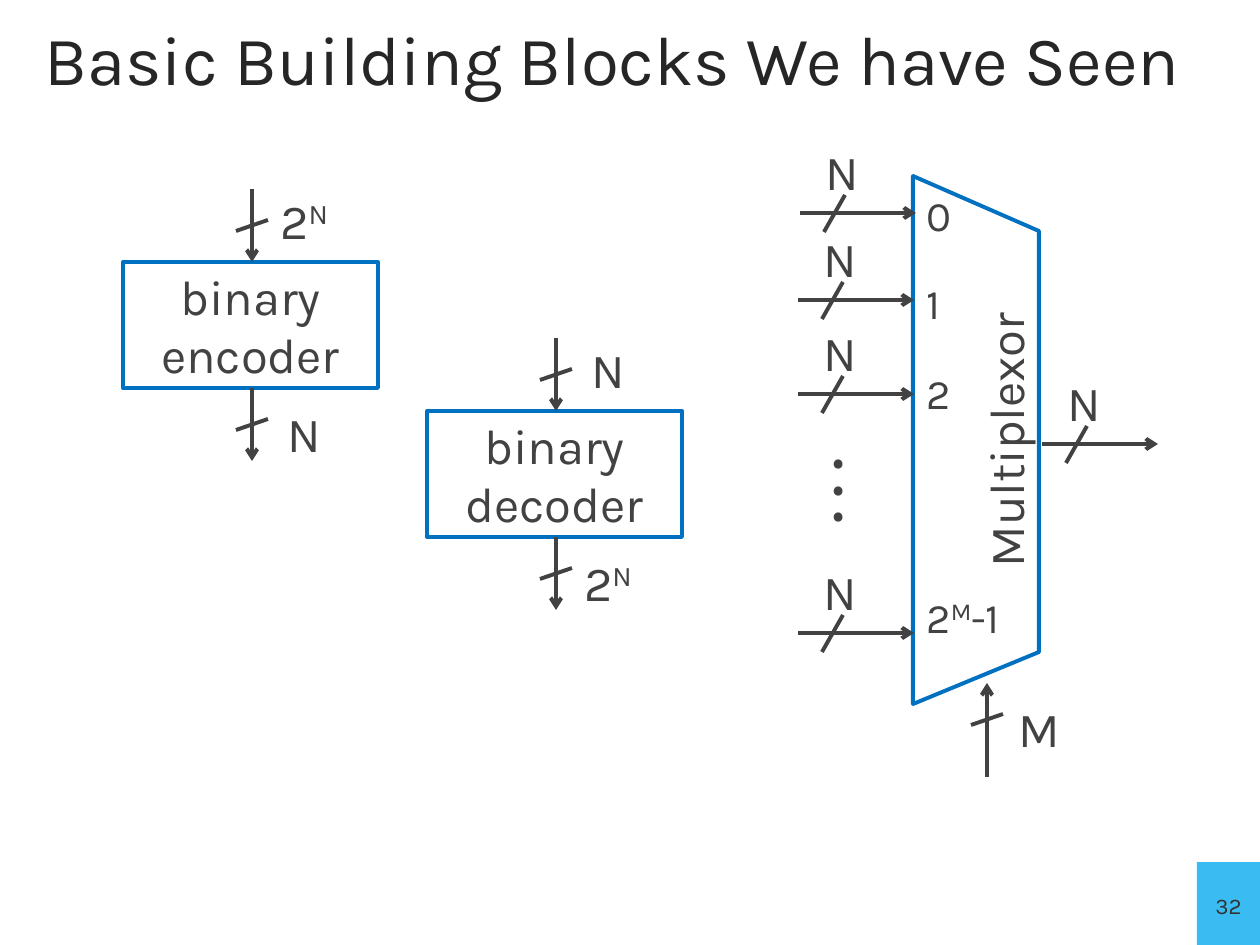
from dataclasses import dataclass

from lxml.etree import SubElement
from pptx import Presentation
from pptx.dml.color import RGBColor
from pptx.enum.shapes import MSO_CONNECTOR as Connector, MSO_SHAPE as Preset
from pptx.enum.text import MSO_ANCHOR as Anchor, MSO_AUTO_SIZE as AutoSize, PP_ALIGN as Align
from pptx.oxml.ns import qn
from pptx.util import Pt

EMU_PER_PX = 914400 / 126


def px(length):
    return round(length * EMU_PER_PX)


@dataclass(frozen=True)
class Theme:
    font: str = "Karla"
    heading: RGBColor = RGBColor(0x26, 0x26, 0x26)
    ink: RGBColor = RGBColor(0x42, 0x42, 0x42)
    outline: RGBColor = RGBColor(0x00, 0x70, 0xC0)
    accent: RGBColor = RGBColor(0x3A, 0xBC, 0xF2)
    page_ink: RGBColor = RGBColor(0x32, 0x32, 0x32)
    title_size: float = 39.6
    dots_size: float = 32
    body_size: float = 28
    port_size: float = 24
    page_size: float = 16
    stroke: float = 2.25
    spacing: float = 1.16


def write(frame, text, *, font, size, color, align=Align.CENTER, anchor=Anchor.MIDDLE,
          spacing=None, bold=None, small_caps=False, wrap=True):
    frame.word_wrap = wrap
    frame.vertical_anchor = anchor
    for index, line in enumerate(text.split("\n")):
        paragraph = frame.paragraphs[0] if index == 0 else frame.add_paragraph()
        paragraph.alignment = align
        paragraph.line_spacing = spacing
        base, *raised = line.split("^")
        pieces = [(base, False)]
        for part in raised:
            pieces += [(part[0], True), (part[1:], False)]
        for piece, superscript in pieces:
            if not piece:
                continue
            run = paragraph.add_run()
            run.text = piece
            run.font.name = font
            run.font.size = Pt(size)
            run.font.color.rgb = color
            run.font.bold = bold
            properties = run._r.get_or_add_rPr()
            if superscript:
                properties.set("baseline", "30000")
            if small_caps:
                properties.set("cap", "small")


class Diagram:
    def __init__(self, slide, theme):
        self.slide = slide
        self.theme = theme

    def text(self, text, left, top, width, height, *, rotation=0, grow=False, **style):
        box = self.slide.shapes.add_textbox(px(left), px(top), px(width), px(height))
        box.rotation = rotation
        defaults = dict(font=self.theme.font, size=self.theme.body_size, color=self.theme.ink)
        write(box.text_frame, text, **(defaults | style))
        if grow:
            box.text_frame.auto_size = AutoSize.SHAPE_TO_FIT_TEXT

    def label(self, text, left, top, width=84, height=82, **style):
        defaults = dict(anchor=Anchor.TOP, spacing=self.theme.spacing, grow=True)
        self.text(text, left, top, width, height, **(defaults | style))

    def outline(self, shape, text):
        shape.shadow.inherit = False
        shape.fill.background()
        shape.line.color.rgb = self.theme.outline
        shape.line.width = Pt(self.theme.stroke)
        write(shape.text_frame, text, font=self.theme.font, size=self.theme.body_size,
              color=self.theme.ink)

    def box(self, text, left, top, width, height):
        area = map(px, (left, top, width, height))
        self.outline(self.slide.shapes.add_shape(Preset.RECTANGLE, *area), text)

    def tile(self, left, top, width, height):
        area = map(px, (left, top, width, height))
        tile = self.slide.shapes.add_shape(Preset.RECTANGLE, *area)
        tile.shadow.inherit = False
        tile.fill.solid()
        tile.fill.fore_color.rgb = self.theme.accent
        tile.line.fill.background()

    def trapezoid(self, text, corners, rotation, text_offset):
        start, *others = corners
        builder = self.slide.shapes.build_freeform(*start, scale=EMU_PER_PX)
        builder.add_line_segments(others, close=True)
        shape = builder.convert_to_shape()
        shape.rotation = rotation
        self.outline(shape, text)
        shape.text_frame.margin_top = px(text_offset)

    def line(self, start, end, arrow=False):
        ends = map(px, (*start, *end))
        line = self.slide.shapes.add_connector(Connector.STRAIGHT, *ends)
        line.line.color.rgb = self.theme.ink
        line.line.width = Pt(self.theme.stroke)
        if arrow:
            SubElement(line.line._get_or_add_ln(), qn("a:tailEnd"), type="arrow")
        SubElement(line._element.spPr, qn("a:effectLst"))

    def vertical_bus(self, width, x, top, length=73, label_rise=0, upward=False):
        ends = [(x, top), (x, top + length)]
        self.line(*(reversed(ends) if upward else ends), arrow=True)
        self.label(width, x + 10, top - label_rise)
        self.line((x + 16, top + 31), (x - 16, top + 42))

    def horizontal_bus(self, width, left, y):
        self.line((left, y), (left + 116, y), arrow=True)
        self.label(width, left, y - 87)
        self.line((left + 45, y - 18), (left + 24, y + 19))

    def coder(self, name, left, top, inputs, outputs):
        width, height, wire = 255, 126, 73
        center = left + 129
        self.box(name, left, top, width, height)
        self.vertical_bus(inputs, center, top - wire, wire, label_rise=14)
        self.vertical_bus(outputs, center, top + height, wire)


def main():
    deck = Presentation()
    deck.slide_width, deck.slide_height = px(1260), px(945)
    theme = Theme()
    diagram = Diagram(deck.slides.add_slide(deck.slide_layouts[6]), theme)

    page_corner = (1197, 862, 63, 83)
    diagram.tile(*page_corner)
    diagram.text("32", *page_corner, size=theme.page_size, color=theme.page_ink,
                 small_caps=True, wrap=False)
    diagram.text("Basic Building Blocks We have Seen", 32, 21, 1197, 73,
                 size=theme.title_size, color=theme.heading, align=Align.LEFT)

    diagram.coder("binary\nencoder", 123, 262, "2^N", "N")
    diagram.coder("binary\ndecoder", 427, 411, "N", "2^N")

    diagram.trapezoid("Multiplexor", [(712, 377), (1240, 377), (1185, 503), (764, 503)],
                      rotation=270, text_offset=65)
    diagram.horizontal_bus("N", 1042, 444)
    diagram.vertical_bus("M", 987, 683, length=94, upward=True)

    ports = [("0", 800, 213, 175), ("1", 798, 300, 263),
             ("2", 798, 394, 353), ("2^M-1", 798, 633, 577)]
    for port, wire_left, wire_y, port_top in ports:
        diagram.horizontal_bus("N", wire_left, wire_y)
        diagram.label(port, 914, port_top, 158, 72, size=theme.port_size, align=Align.LEFT)
    diagram.label(". . .", 760, 445, 111, 92, rotation=270, size=theme.dots_size, bold=True)

    deck.save("out.pptx")


if __name__ == "__main__":
    main()
